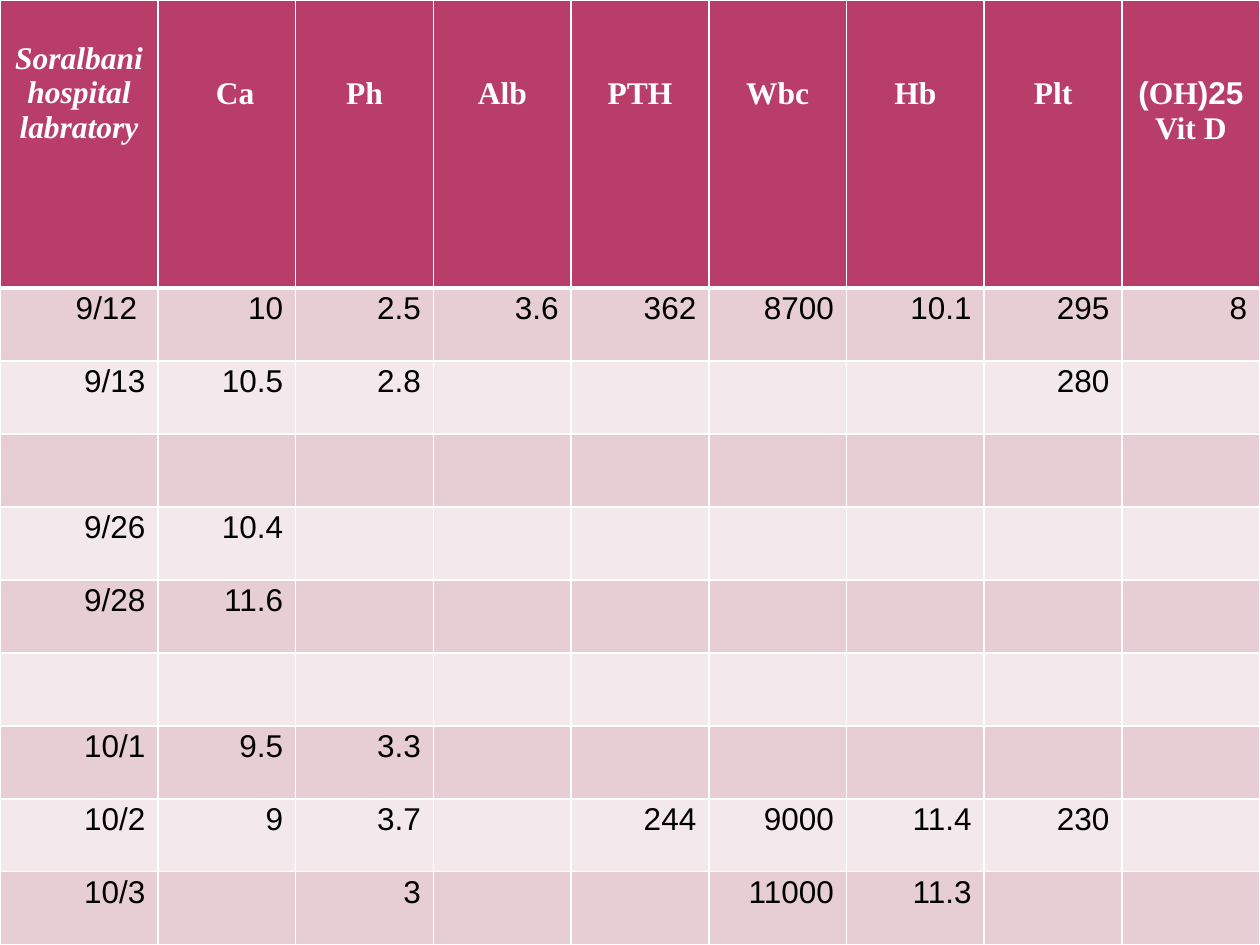
from dataclasses import dataclass
from lxml.etree import SubElement
from pptx import Presentation
from pptx.dml.color import RGBColor
from pptx.enum.text import PP_ALIGN
from pptx.oxml import parse_xml
from pptx.oxml.ns import nsdecls, qn
from pptx.util import Pt


@dataclass(frozen=True)
class Theme:
    head: str = "B83D68"
    bands: tuple = ("E6CED4", "F3E8EB")
    light: str = "FFFFFF"
    dark: str = "000000"
    latin: str = "Times New Roman"
    script: str = "Arial"
    size: int = 18
    thin: int = 1
    thick: int = 3


THEME = Theme()
SCALE = 914400 / 126
WIDTH, HEIGHT = 1260, 945
FIRST, TOP, ROW = 158, 288, 73
PAD, SPACE = 13, 8

HEADS = [
    ["Soralbani hospital labratory"], ["Ca"], ["Ph"], ["Alb"], ["PTH"],
    ["Wbc"], ["Hb"], ["Plt"], ["25(OH)", "Vit D"],
]
TESTS = [
    ["9/12", "10", "2.5", "3.6", "362", "8700", "10.1", "295", "8"],
    ["9/13", "10.5", "2.8", "", "", "", "", "280", ""],
    [""] * 9,
    ["9/26", "10.4"] + [""] * 7,
    ["9/28", "11.6"] + [""] * 7,
    [""] * 9,
    ["10/1", "9.5", "3.3"] + [""] * 6,
    ["10/2", "9", "3.7", "", "244", "9000", "11.4", "230", ""],
    ["10/3", "", "3", "", "", "11000", "11.3", "", ""],
]


def px(count):
    return round(count * SCALE)


def add_text(cell, lines, align, color, bold=False, italic=False):
    frame = cell.text_frame
    for i, line in enumerate(lines):
        para = frame.add_paragraph() if i else frame.paragraphs[0]
        para.alignment = align
        para._p.get_or_add_pPr().set("rtl", "1")
        para.font.size = Pt(THEME.size)
        if not line:
            continue
        run = para.add_run()
        run.text = line
        font = run.font
        font.size = Pt(THEME.size)
        font.bold, font.italic = bold, italic
        font.color.rgb = RGBColor.from_string(color)
        font.name = THEME.latin
        SubElement(run._r.get_or_add_rPr(), qn("a:cs")).set("typeface", THEME.script)


def paint(cell, color, above, below):
    cell.fill.solid()
    cell.fill.fore_color.rgb = RGBColor.from_string(color)
    sides = (("L", THEME.thin), ("R", THEME.thin), ("T", above), ("B", below))
    for i, (side, width) in enumerate(sides):
        line = parse_xml(
            f'<a:ln{side} {nsdecls("a")} w="{Pt(width)}"><a:solidFill>'
            f'<a:srgbClr val="{THEME.light}"/></a:solidFill></a:ln{side}>'
        )
        cell._tc.get_or_add_tcPr().insert(i, line)


def fill_head(table):
    for col, lines in enumerate(HEADS):
        cell = table.cell(0, col)
        cell.margin_top = px(76 if col else 41)
        add_text(cell, lines, PP_ALIGN.CENTER, THEME.light, True, col == 0)
        paint(cell, THEME.head, THEME.thin, THEME.thick)
    table.cell(0, 1).margin_left = px(PAD + 2 * SPACE)


def fill_body(table):
    for row, values in enumerate(TESTS):
        for col, value in enumerate(values):
            cell = table.cell(row + 1, col)
            cell.margin_top = px(3)
            add_text(cell, [value], PP_ALIGN.RIGHT, THEME.dark)
            above = THEME.thin if row else THEME.thick
            paint(cell, THEME.bands[row % 2], above, THEME.thin)
    table.cell(1, 0).margin_right = px(PAD + SPACE)


def add_grid(slide):
    rows, cols = len(TESTS) + 1, len(HEADS)
    table = slide.shapes.add_table(rows, cols, 0, 0, px(WIDTH), px(HEIGHT)).table
    for i, col in enumerate(table.columns):
        col.width = px((WIDTH - FIRST) / (cols - 1) if i else FIRST)
    for i, row in enumerate(table.rows):
        row.height = px(ROW if i else TOP)
    return table


def main():
    deck = Presentation()
    deck.slide_width, deck.slide_height = px(WIDTH), px(HEIGHT)
    slide = deck.slides.add_slide(deck.slide_layouts[6])
    table = add_grid(slide)
    fill_head(table)
    fill_body(table)
    deck.save("out.pptx")


if __name__ == "__main__":
    main()
